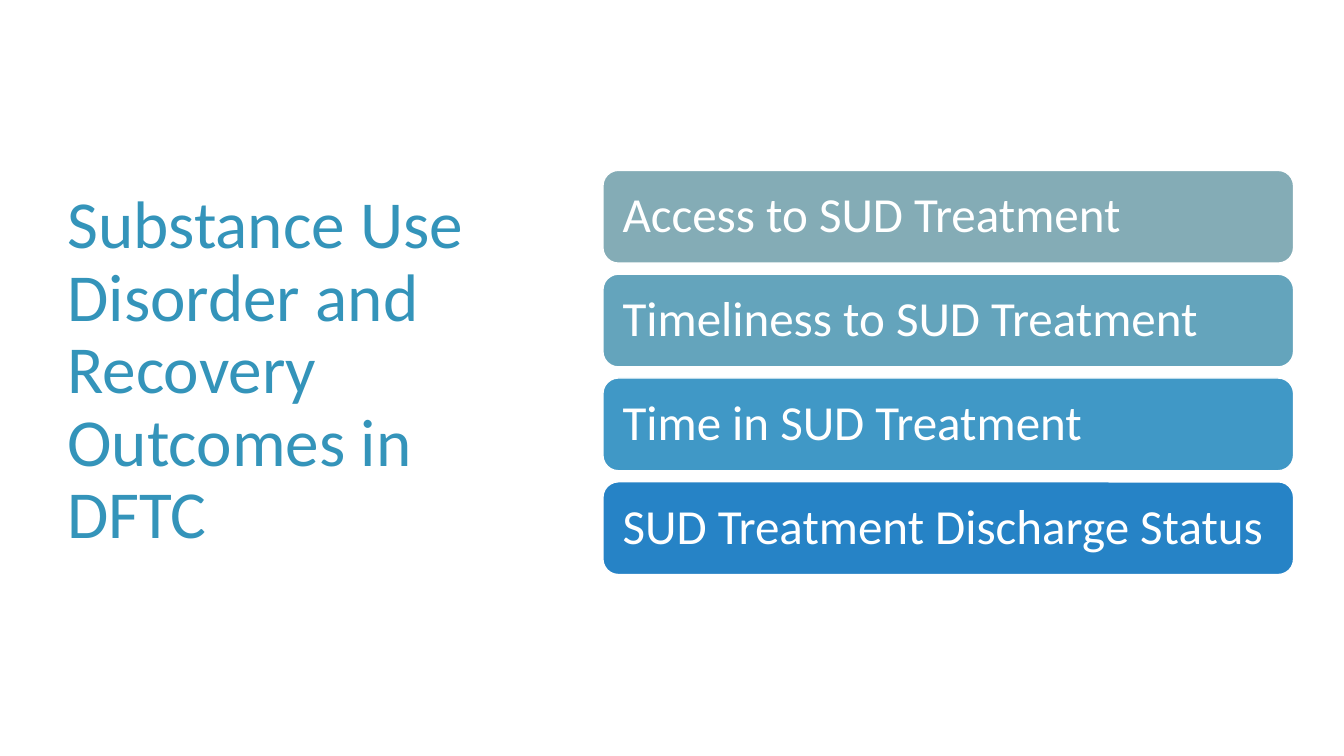
from pptx import Presentation
from pptx.dml.color import RGBColor
from pptx.enum.shapes import MSO_SHAPE
from pptx.enum.text import MSO_ANCHOR, PP_ALIGN
from pptx.util import Inches, Pt

OUTCOMES = [
    ("Access to SUD Treatment", "84ACB6"),
    ("Timeliness to SUD Treatment", "64A4BC"),
    ("Time in SUD Treatment", "4098C6"),
    ("SUD Treatment Discharge Status", "2683C6"),
]
BAR_TOP = 1.69
BAR_STEP = 1.03


def color(value):
    return RGBColor.from_string(value)


def write_text(shape, text, size, text_color, inset):
    frame = shape.text_frame
    frame.word_wrap = True
    frame.vertical_anchor = MSO_ANCHOR.MIDDLE
    frame.margin_left = frame.margin_right = Inches(inset)
    frame.margin_top = frame.margin_bottom = Inches(0.05)
    para = frame.paragraphs[0]
    para.text = text
    para.alignment = PP_ALIGN.LEFT
    para.line_spacing = 0.9
    para.font.name = "Calibri"
    para.font.size = Pt(size)
    para.font.color.rgb = color(text_color)


def add_title(page, text):
    box = page.shapes.add_textbox(Inches(0.57), Inches(0.68), Inches(4.16), Inches(6.02))
    write_text(box, text, 48, "3494BA", 0.1)


def add_bar(page, top, text, fill):
    bar = page.shapes.add_shape(
        MSO_SHAPE.ROUNDED_RECTANGLE, Inches(5.98), Inches(top), Inches(6.85), Inches(0.92)
    )
    bar.shadow.inherit = False
    bar.fill.solid()
    bar.fill.fore_color.rgb = color(fill)
    bar.line.color.rgb = color("FFFFFF")
    bar.line.width = Pt(1)
    write_text(bar, text, 35, "FFFFFF", 0.15)


def main():
    deck = Presentation()
    deck.slide_width = Inches(13.33)
    deck.slide_height = Inches(7.5)
    page = deck.slides.add_slide(deck.slide_layouts[6])
    add_title(page, "Substance Use Disorder and Recovery Outcomes in DFTC")
    for index, (text, fill) in enumerate(OUTCOMES):
        add_bar(page, BAR_TOP + index * BAR_STEP, text, fill)
    deck.save("out.pptx")


if __name__ == "__main__":
    main()
